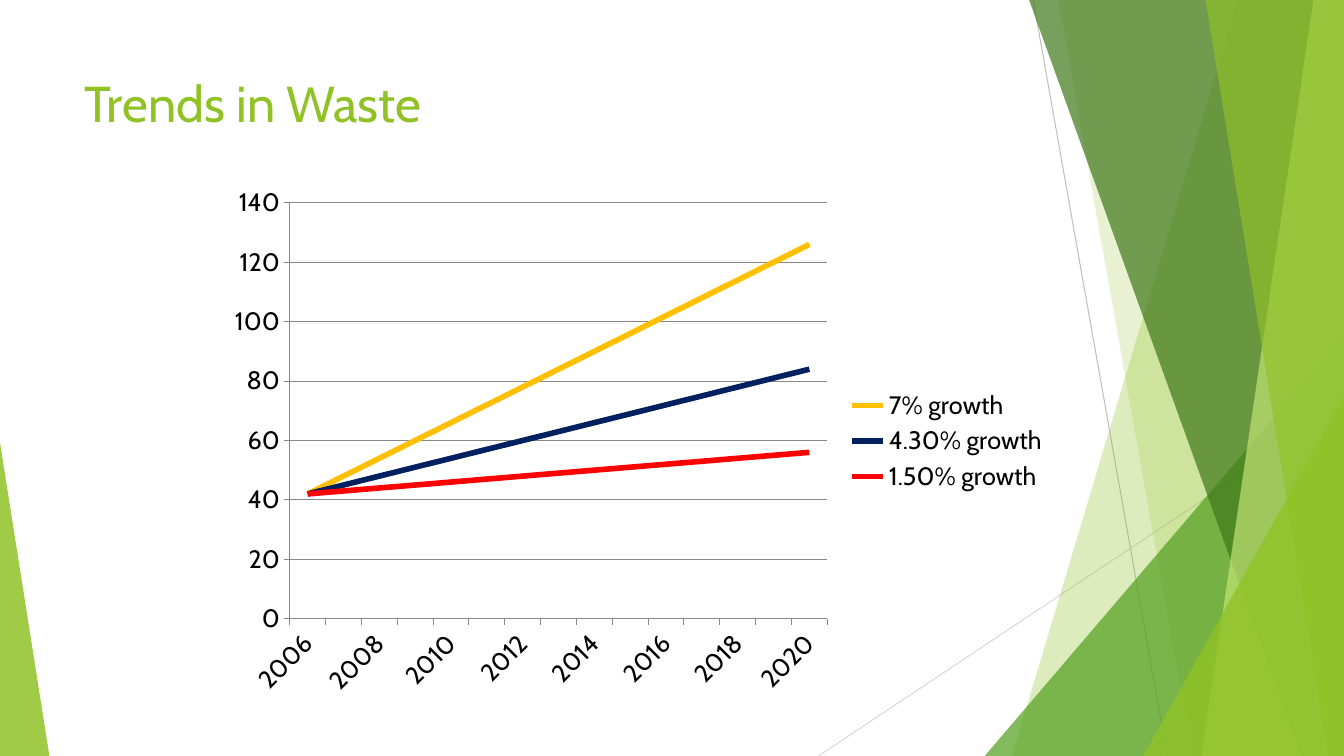
"""Build the Trends in Waste slide: a line chart beside overlapping green facets."""
import lxml.etree
import pptx
import pptx.chart.data
import pptx.dml.color
import pptx.enum.chart
import pptx.enum.shapes
import pptx.enum.text
import pptx.oxml.ns
import pptx.util

Pt = pptx.util.Pt
qn = pptx.oxml.ns.qn

TITLE = "Trends in Waste"
YEARS = range(2006, 2021)
START_WASTE = 42
GROWTH = [
    ("7% growth", 6, "amber"),
    ("4.30% growth", 3, "navy"),
    ("1.50% growth", 1, "red"),
]

WIDTH, HEIGHT = 960, 540
THEME = {
    "font": "Cabin", "title_size": 36, "chart_size": 18, "series_width": 4, "thin": 0.75,
    "lime": "90C226", "leaf": "54A021", "forest": "3F7819", "pale": "C0E474",
    "amber": "FFC000", "navy": "002060", "red": "FF0000",
    "black": "000000", "axis": "878787", "ray": "BFBFBF", "pale_ray": "D9D9D9",
}
RAYS = [
    ((738, 0), (833.8, HEIGHT), "ray"),
    ((WIDTH, 290.2), (584.6, HEIGHT), "pale_ray"),
]
FACETS = [
    ("band", (884.2, 722.9), "lime", 30),
    ("band", (756, 851.8), "lime", 20),
    ("corner", (703.4, WIDTH, 239.8, 1), "leaf", 72),
    ("band", (735.1, 929.5), "forest", 70),
    ("band", (938.2, 858.2), "pale", 70),
    ("band", (861.1, 949), "lime", 65),
    ("corner", (816.5, WIDTH, 283, 1), "lime", 80),
    ("corner", (0, 35.3, 316.1, 0), "lime", 85),
]
CHART_BOX = (156, 126, 600, 378)
PLOT = {"x": 0.085, "y": 0.05, "w": 0.64, "h": 0.786}


def color(name):
    return pptx.dml.color.RGBColor.from_string(THEME[name])


def add_text(slide, text, box, *, size, ink):
    frame = slide.shapes.add_textbox(*map(Pt, box)).text_frame
    frame.word_wrap = True
    frame.vertical_anchor = pptx.enum.text.MSO_ANCHOR.TOP
    run = frame.paragraphs[0].add_run()
    run.text = text
    run.font.name = THEME["font"]
    run.font.size = Pt(size)
    run.font.color.rgb = color(ink)


def add_ray(slide, start, end, ink):
    ray = slide.shapes.add_connector(
        pptx.enum.shapes.MSO_CONNECTOR.STRAIGHT, *map(Pt, start + end))
    ray.line.color.rgb = color(ink)
    ray.line.width = Pt(THEME["thin"])
    lxml.etree.SubElement(ray._element.spPr, qn("a:effectLst"))


def add_band(slide, top_x, bottom_x):
    outline = slide.shapes.build_freeform(Pt(top_x), Pt(0))
    corners = [(WIDTH, 0), (WIDTH, HEIGHT), (bottom_x, HEIGHT)]
    outline.add_line_segments([(Pt(x), Pt(y)) for x, y in corners], close=True)
    return outline.convert_to_shape()


def add_corner(slide, left, right, top, apex):
    corner = slide.shapes.add_shape(
        pptx.enum.shapes.MSO_SHAPE.ISOSCELES_TRIANGLE,
        Pt(left), Pt(top), Pt(right - left), Pt(HEIGHT - top))
    corner.adjustments[0] = apex
    return corner


def add_facet(slide, kind, geometry, ink, opacity):
    facet = {"band": add_band, "corner": add_corner}[kind](slide, *geometry)
    facet.shadow.inherit = False
    facet.line.fill.background()
    facet.fill.solid()
    facet.fill.fore_color.rgb = color(ink)
    rgb = facet._element.spPr.find(".//" + qn("a:srgbClr"))
    lxml.etree.SubElement(rgb, qn("a:alpha")).set("val", str(opacity * 1000))


def place_plot(chart):
    area = chart._chartSpace.find(".//" + qn("c:plotArea"))
    for old in area.findall(qn("c:layout")):
        area.remove(old)
    layout = lxml.etree.Element(qn("c:layout"))
    area.insert(0, layout)
    manual = lxml.etree.SubElement(layout, qn("c:manualLayout"))
    settings = {"layoutTarget": "inner", "xMode": "edge", "yMode": "edge", **PLOT}
    for tag, value in settings.items():
        lxml.etree.SubElement(manual, qn("c:" + tag)).set("val", str(value))


def style_axes(chart):
    years, waste = chart.category_axis, chart.value_axis
    for axis in (years, waste):
        axis.major_tick_mark = pptx.enum.chart.XL_TICK_MARK.OUTSIDE
        axis.minor_tick_mark = pptx.enum.chart.XL_TICK_MARK.NONE
        axis.format.line.color.rgb = color("axis")
        axis.format.line.width = Pt(THEME["thin"])
        axis.tick_labels.font.size = Pt(THEME["chart_size"])
    waste.minimum_scale, waste.maximum_scale, waste.major_unit = 0, 140, 20
    waste.has_major_gridlines = True
    waste.major_gridlines.format.line.color.rgb = color("axis")
    waste.major_gridlines.format.line.width = Pt(THEME["thin"])
    years._element.find(".//" + qn("a:bodyPr")).set("rot", "-2700000")
    skip = lxml.etree.Element(qn("c:tickLblSkip"))
    skip.set("val", "2")
    years._element.find(qn("c:noMultiLvlLbl")).addprevious(skip)


def add_waste_chart(slide):
    trends = pptx.chart.data.CategoryChartData()
    trends.categories = [str(year) for year in YEARS]
    for name, step, _ in GROWTH:
        trends.add_series(name, [START_WASTE + step * i for i in range(len(YEARS))])
    chart = slide.shapes.add_chart(
        pptx.enum.chart.XL_CHART_TYPE.LINE, *map(Pt, CHART_BOX), trends).chart
    chart.has_title = False
    chart.font.name = THEME["font"]
    chart.font.size = Pt(THEME["chart_size"])
    chart.font.color.rgb = color("black")
    chart.has_legend = True
    chart.legend.position = pptx.enum.chart.XL_LEGEND_POSITION.RIGHT
    chart.legend.include_in_layout = False
    chart.plots[0].vary_by_categories = False
    for series, (_, _, ink) in zip(chart.plots[0].series, GROWTH):
        series.smooth = False
        series.marker.style = pptx.enum.chart.XL_MARKER_STYLE.NONE
        series.format.line.color.rgb = color(ink)
        series.format.line.width = Pt(THEME["series_width"])
    style_axes(chart)
    place_plot(chart)


def main():
    deck = pptx.Presentation()
    deck.slide_width, deck.slide_height = Pt(WIDTH), Pt(HEIGHT)
    slide = deck.slides.add_slide(deck.slide_layouts[6])
    for ray in RAYS:
        add_ray(slide, *ray)
    for facet in FACETS:
        add_facet(slide, *facet)
    add_text(slide, TITLE, (53.3, 48.2, 676.8, 103.7), size=THEME["title_size"], ink="lime")
    add_waste_chart(slide)
    deck.save("out.pptx")


if __name__ == "__main__":
    main()
